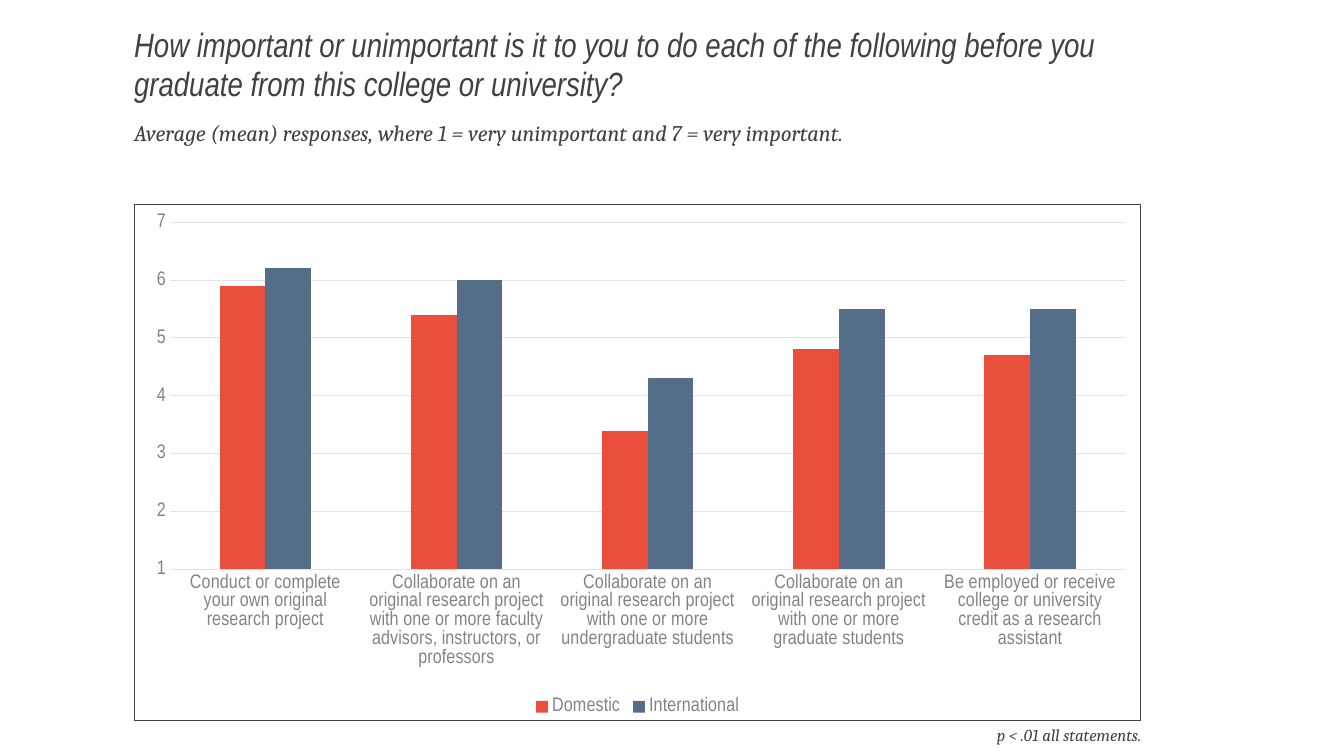
from pptx import Presentation
from pptx.chart.data import CategoryChartData
from pptx.dml.color import RGBColor as RGB
from pptx.enum.chart import XL_CHART_TYPE as CT, XL_LEGEND_POSITION as LP, XL_TICK_MARK as TM
from pptx.enum.text import MSO_ANCHOR as ANCHOR, PP_ALIGN as ALIGN
from pptx.oxml import parse_xml
from pptx.oxml.ns import nsdecls, qn
from pptx.util import Inches as In, Pt

THEME = dict(
    ink="414042", label="838285", grid="E2E2E3",
    domestic="E94F3C", international="546D89",
    sans="Arial Narrow", serif="Cambria",
    title=24, subtitle=16, axis=14, note=12, base=10, hairline=0.75,
)

prs = Presentation()
prs.slide_width, prs.slide_height = In(13.33), In(7.5)
s = prs.slides.add_slide(prs.slide_layouts[6])

# Shared column for the text and the chart
LEFT, WIDTH = 1.33, 9.99


def add_text(text, x, y, w, h, *, font, size, top=0, bottom=0,
             anchor=ANCHOR.TOP, align=ALIGN.LEFT, spacing=1.0):
    tf = s.shapes.add_textbox(In(x), In(y), In(w), In(h)).text_frame
    tf.word_wrap = True
    tf.vertical_anchor = anchor
    tf.margin_left = tf.margin_right = 0
    tf.margin_top, tf.margin_bottom = In(top), In(bottom)
    p = tf.paragraphs[0]
    p.alignment, p.line_spacing = align, spacing
    r = p.add_run()
    r.text = text
    r.font.name, r.font.size, r.font.italic = font, Pt(size), True
    r.font.color.rgb = RGB.from_string(THEME["ink"])


def style_font(f, *, name=THEME["sans"], size=THEME["axis"], color=THEME["label"]):
    f.name, f.size, f.bold = name, Pt(size), False
    f.color.rgb = RGB.from_string(color)


# Question and scale
add_text("How important or unimportant is it to you to do each of the following "
         "before you graduate from this college or university?",
         LEFT, 0.27, 10.66, 0.94, font=THEME["sans"], size=THEME["title"], spacing=0.95)
add_text("Average (mean) responses, where 1 = very unimportant and 7 = very important.",
         LEFT, 0.88, WIDTH, 0.68, font=THEME["serif"], size=THEME["subtitle"],
         top=0.3, bottom=0.11, anchor=ANCHOR.MIDDLE)

# Chart data
data = CategoryChartData(number_format="General")
data.categories = [
    "Conduct or complete your own original research project",
    "Collaborate on an original research project with one or more faculty advisors, "
    "instructors, or professors",
    "Collaborate on an original research project with one or more undergraduate students",
    "Collaborate on an original research project with one or more graduate students",
    "Be employed or receive college or university credit as a research assistant",
]
data.add_series("Domestic", (5.9, 5.4, 3.4, 4.8, 4.7))
data.add_series("International", (6.2, 6, 4.3, 5.5, 5.5))
chart = s.shapes.add_chart(CT.COLUMN_CLUSTERED, In(LEFT), In(2.02), In(WIDTH), In(5.13),
                           data).chart
style_font(chart.font, name=THEME["serif"], size=THEME["base"], color=THEME["ink"])
chart.has_title = False

# Columns
plot = chart.plots[0]
plot.gap_width, plot.overlap, plot.vary_by_categories = 219, 0, False
for series, key in zip(plot.series, ("domestic", "international")):
    series.format.fill.solid()
    series.format.fill.fore_color.rgb = RGB.from_string(THEME[key])

# Axes and gridlines
cat, val = chart.category_axis, chart.value_axis
for axis in (cat, val):
    axis.major_tick_mark = axis.minor_tick_mark = TM.NONE
    style_font(axis.tick_labels.font)
val.minimum_scale, val.maximum_scale, val.major_unit = 1, 7, 1
val.format.line.fill.background()
for line in (cat.format.line, val.major_gridlines.format.line):
    line.color.rgb = RGB.from_string(THEME["grid"])
    line.width = Pt(THEME["hairline"])

# Legend
chart.has_legend = True
chart.legend.position, chart.legend.include_in_layout = LP.BOTTOM, False
style_font(chart.legend.font)

# Plot area as shares of the chart, and the chart border
area = chart.element.find(".//" + qn("c:plotArea"))
for old in area.findall(qn("c:layout")):
    area.remove(old)
modes = "".join(f'<c:{k}Mode val="edge"/>' for k in "xy")
shares = "".join(f'<c:{k} val="{v}"/>' for k, v in zip("xywh", (0.035, 0.035, 0.95, 0.673)))
area.insert(0, parse_xml(
    f'<c:layout {nsdecls("c")}><c:manualLayout><c:layoutTarget val="inner"/>'
    f'{modes}{shares}</c:manualLayout></c:layout>'))
chart.element.find(qn("c:chart")).addnext(parse_xml(
    f'<c:spPr {nsdecls("c", "a")}><a:noFill/><a:ln w="{Pt(THEME["hairline"])}"><a:solidFill>'
    f'<a:srgbClr val="{THEME["ink"]}"/></a:solidFill></a:ln></c:spPr>'))

# Significance note, flush with the right edge of the chart
add_text("p < .01 all statements.", LEFT + WIDTH - 2.34, 7.14, 2.34, 0.3, font=THEME["serif"],
         size=THEME["note"], top=0.05, bottom=0.05, align=ALIGN.RIGHT)

prs.save("out.pptx")
